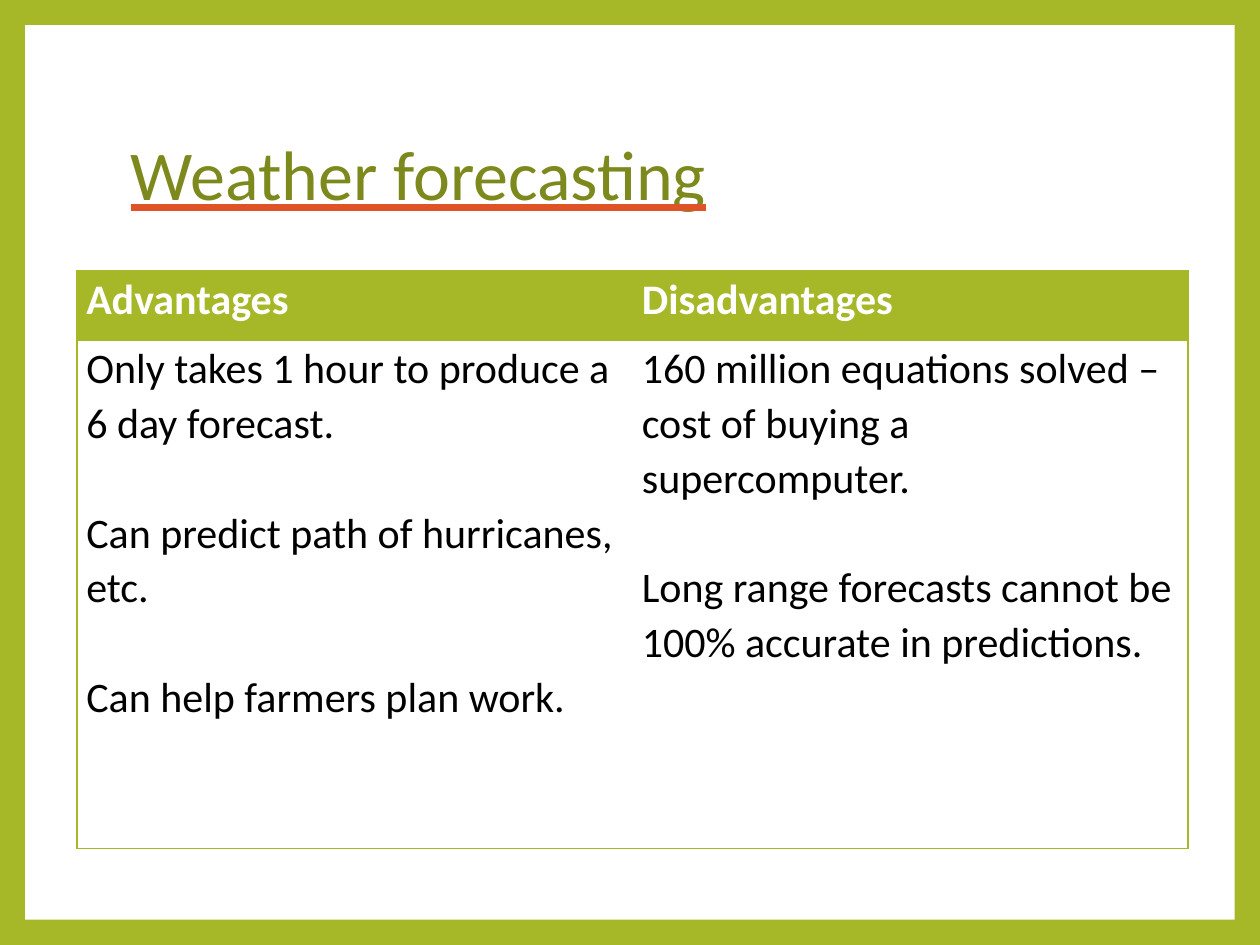
import pptx
import pptx.dml.color
import pptx.enum.shapes
import pptx.enum.text
import pptx.oxml
import pptx.oxml.ns
import pptx.util

Cm = pptx.util.Cm
Pt = pptx.util.Pt
FONT = "Calibri"
COLORS = {"green": "A6B727", "olive": "7D891D", "orange": "DF5327",
          "white": "FFFFFF", "black": "000000"}
PLAIN = "{2D5ABB26-0587-4C30-8999-92F81FD0307C}"  # table style without grid
GAP = 31.3  # one line of body text, in points

HEADS = ["Advantages", "Disadvantages"]
POINTS = [
    ["Only takes 1 hour to produce a 6 day forecast.",
     "Can predict path of hurricanes, etc.",
     "Can help farmers plan work."],
    ["160 million equations solved – cost of buying a supercomputer.",
     "Long range forecasts cannot be 100% accurate in predictions."],
]


def rgb(name):
    return pptx.dml.color.RGBColor.from_string(COLORS[name])


def paint(fill, name):
    fill.solid()
    fill.fore_color.rgb = rgb(name)


def make(tag, inner, attrs=""):
    space = pptx.oxml.ns.nsdecls("a")
    return pptx.oxml.parse_xml(f"<a:{tag} {space} {attrs}>{inner}</a:{tag}>")


def solid(name):
    return f'<a:solidFill><a:srgbClr val="{COLORS[name]}"/></a:solidFill>'


def write(para, text, size, color, space, bold=False):
    para.line_spacing = space
    run = para.add_run()
    run.text = text
    run.font.name = FONT
    run.font.size = Pt(size)
    run.font.bold = bold
    run.font.color.rgb = rgb(color)
    return run


def add_frame(slide, width, height, edge):
    paint(slide.background.fill, "green")
    panel = slide.shapes.add_shape(
        pptx.enum.shapes.MSO_SHAPE.RECTANGLE,
        edge, edge, width - 2 * edge, height - 2 * edge)
    panel.shadow.inherit = False
    paint(panel.fill, "white")
    panel.line.fill.background()


def add_title(slide, left, top, width, height):
    frame = slide.shapes.add_textbox(left, top, width, height).text_frame
    frame.word_wrap = True
    frame.vertical_anchor = pptx.enum.text.MSO_ANCHOR.MIDDLE
    run = write(frame.paragraphs[0], "Weather forecasting", 40, "olive", 0.9)
    run.font.underline = True
    # The underline has its own colour
    run.font.fill.fore_color  # text fill is already solid
    fill = run.font.fill
    latin = run._r.rPr.find(pptx.oxml.ns.qn("a:latin"))
    latin.addprevious(make("uFill", solid("orange")))


def fill_cell(cell, texts, sides, color, back, bold):
    cell.margin_left = cell.margin_right = Cm(0.19)
    cell.margin_top = cell.margin_bottom = 0
    props = cell._tc.get_or_add_tcPr()
    for side in sides:
        props.append(make(f"ln{side}", solid("green"), 'w="10000"'))
    paint(cell.fill, back)
    for i, text in enumerate(texts):
        frame = cell.text_frame
        para = frame.add_paragraph() if i else frame.paragraphs[0]
        if i:
            para.space_before = Pt(GAP)
        write(para, text, 24, color, 1.07, bold)


def add_grid(slide, left, top, width, height):
    shape = slide.shapes.add_table(2, 2, left, top, width, height)
    table = shape.table
    table.first_row = table.horz_banding = False
    table._tbl.tblPr.find(pptx.oxml.ns.qn("a:tableStyleId")).text = PLAIN
    head = Cm(1.4)
    table.rows[0].height = head
    table.rows[1].height = height - head
    for col, side in enumerate("LR"):
        table.columns[col].width = width // 2
        fill_cell(table.cell(0, col), [HEADS[col]], side + "T",
                  "white", "green", True)
        fill_cell(table.cell(1, col), POINTS[col], side + "TB",
                  "black", "white", False)


def main():
    deck = pptx.Presentation()
    deck.slide_width, deck.slide_height = Cm(25.4), Cm(19.05)
    slide = deck.slides.add_slide(deck.slide_layouts[6])
    add_frame(slide, deck.slide_width, deck.slide_height, Cm(0.51))
    add_title(slide, Cm(2.39), Cm(1.7), Cm(20.57), Cm(3.76))
    add_grid(slide, Cm(1.55), Cm(5.46), Cm(22.4), Cm(11.64))
    deck.save("out.pptx")


if __name__ == "__main__":
    main()
